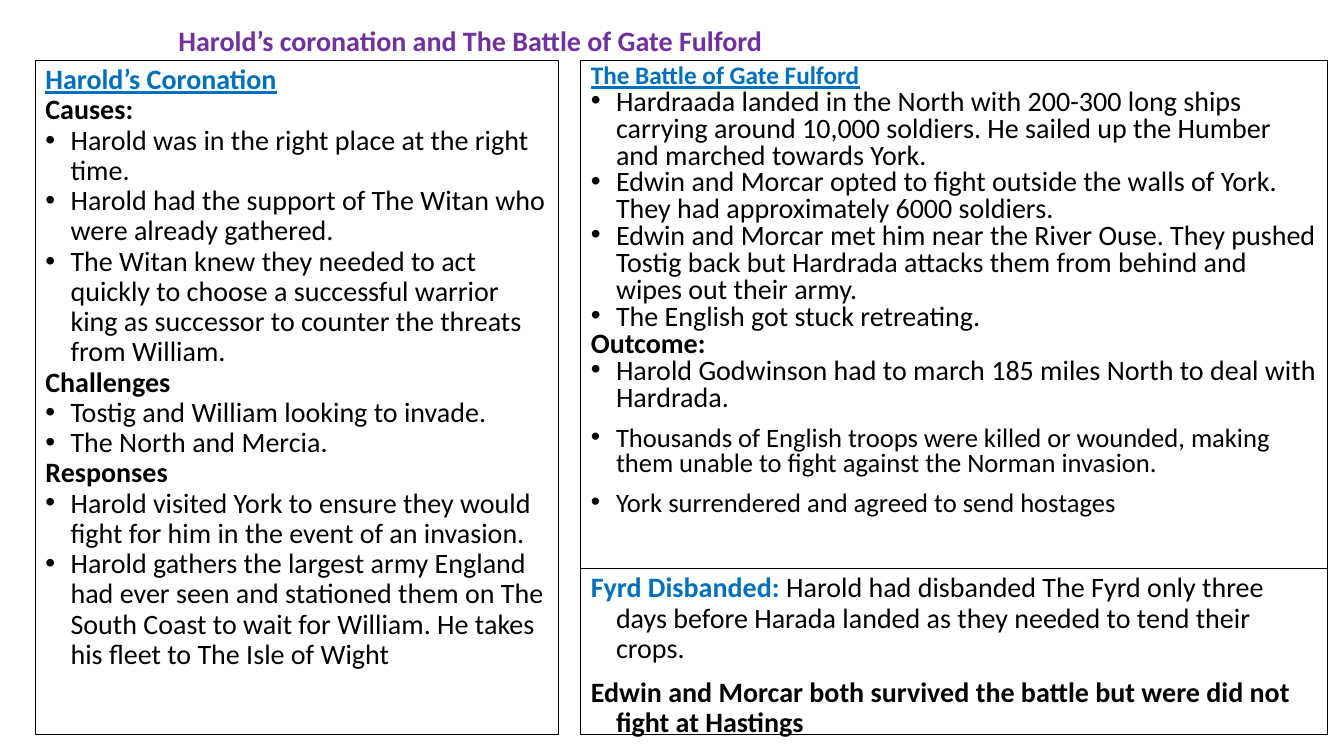
from pptx import Presentation
from pptx.dml.color import RGBColor
from pptx.enum.text import MSO_ANCHOR as Anchor, MSO_AUTO_SIZE as Fit, PP_ALIGN as Align
from pptx.oxml.ns import qn
from pptx.util import Pt
from lxml.etree import SubElement

TITLE = "Harold’s coronation and The Battle of Gate Fulford"

CROWN = [
    ("head", "Harold’s Coronation"),
    ("bold", "Causes:"),
    ("item", "Harold was in the right place at the right time."),
    ("item", "Harold had the support of The Witan who were already gathered."),
    ("item", "The Witan knew they needed to act quickly to choose a successful warrior "
             "king as successor to counter the threats from William."),
    ("bold", "Challenges"),
    ("item", "Tostig and William looking to invade."),
    ("item", "The North and Mercia."),
    ("bold", "Responses"),
    ("item", "Harold visited York to ensure they would fight for him in the event of an invasion."),
    ("item", "Harold gathers the largest army England had ever seen and stationed them on The "
             "South Coast to wait for William. He takes his fleet to The Isle of Wight"),
]
BATTLE = [
    ("small head", "The Battle of Gate Fulford"),
    ("item", "Hardraada landed in the North with 200-300 long ships carrying around 10,000 "
             "soldiers. He sailed up the Humber and marched towards York."),
    ("item", "Edwin and Morcar opted to fight outside the walls of York. "
             "They had approximately 6000 soldiers."),
    ("item", "Edwin and Morcar met him near the River Ouse. They pushed Tostig back but "
             "Hardrada attacks them from behind and wipes out their army."),
    ("item", "The English got stuck retreating."),
    ("bold", "Outcome:"),
    ("item", "Harold Godwinson had to march 185 miles North to deal with Hardrada."),
    ("late item", "Thousands of English troops were killed or wounded, making them unable "
                  "to fight against the Norman invasion."),
    ("late item", "York surrendered and agreed to send hostages"),
]
FYRD = [
    ("plain", "Harold had disbanded The Fyrd only three days before Harada landed "
              "as they needed to tend their crops."),
    ("late bold", "Edwin and Morcar both survived the battle but were did not fight at Hastings"),
]
LEAD = "Fyrd Disbanded: "

BLUE, BLACK, PURPLE = "0070C0", "000000", "7030A0"
BASE = dict(name="Calibri", size=Pt(20), bold=False, underline=False)
STYLES = {
    "head": (BLUE, dict(bold=True, underline=True)),
    "small head": (BLUE, dict(bold=True, underline=True, size=Pt(18))),
    "lead": (BLUE, dict(bold=True)),
    "title": (PURPLE, dict(bold=True)),
    "bold": (BLACK, dict(bold=True)),
    "late bold": (BLACK, dict(bold=True)),
    "plain": (BLACK, {}),
    "item": (BLACK, {}),
    "late item": (BLACK, dict(size=Pt(19))),
}

PX = 9144
TOP, BASELINE, SPLIT = 60, 729, 564
LEFT, RIGHT = (35, 519), (576, 741)
BOXES = [
    (BATTLE, RIGHT, TOP, SPLIT, 0.8),
    (FYRD, RIGHT, SPLIT, BASELINE, 0.9),
    (CROWN, LEFT, TOP, BASELINE, 0.9),
]


def tint(code):
    return RGBColor.from_string(code)


def place(shape, *box):
    for side, px in zip(("left", "top", "width", "height"), box):
        setattr(shape, side, px * PX)


def write(para, text, style):
    code, extra = STYLES[style]
    run = para.add_run()
    run.text = text
    for key, value in {**BASE, **extra}.items():
        setattr(run.font, key, value)
    run.font.color.rgb = tint(code)


def indent(para, style):
    props = para._p.get_or_add_pPr()
    props.set("marL", str(25 * PX))
    props.set("indent", str(-25 * PX))
    if "item" in style:
        SubElement(props, qn("a:buChar"), char="•")
    else:
        SubElement(props, qn("a:buNone"))


def fill(shape, rows, pitch):
    frame = shape.text_frame
    frame.auto_size = Fit.NONE
    frame.vertical_anchor = Anchor.TOP
    for i, (style, text) in enumerate(rows):
        para = frame.add_paragraph() if i else frame.paragraphs[0]
        indent(para, style)
        para.line_spacing = pitch
        para.space_before = Pt(10 if "late" in style else 0)
        if style == "plain":
            write(para, LEAD, "lead")
        write(para, text, style)


def main():
    deck = Presentation()
    deck.slide_width, deck.slide_height = 1333 * PX, 750 * PX
    slide = deck.slides.add_slide(deck.slide_layouts[4])
    title, *bodies = slide.placeholders

    place(title, 167, 0, 1000, 84)
    title.text_frame.auto_size = Fit.NONE
    title.text_frame.vertical_anchor = Anchor.MIDDLE
    para = title.text_frame.paragraphs[0]
    para.alignment = Align.LEFT
    para.line_spacing = 0.9
    write(para, TITLE, "title")

    for body, (rows, (left, width), top, end, pitch) in zip(bodies, BOXES):
        place(body, left, top, width, end - top)
        body.line.color.rgb = tint(BLACK)
        body.line.width = Pt(0.75)
        fill(body, rows, pitch)

    for spare in bodies[len(BOXES):]:
        spare.element.getparent().remove(spare.element)
    deck.save("out.pptx")


if __name__ == "__main__":
    main()
